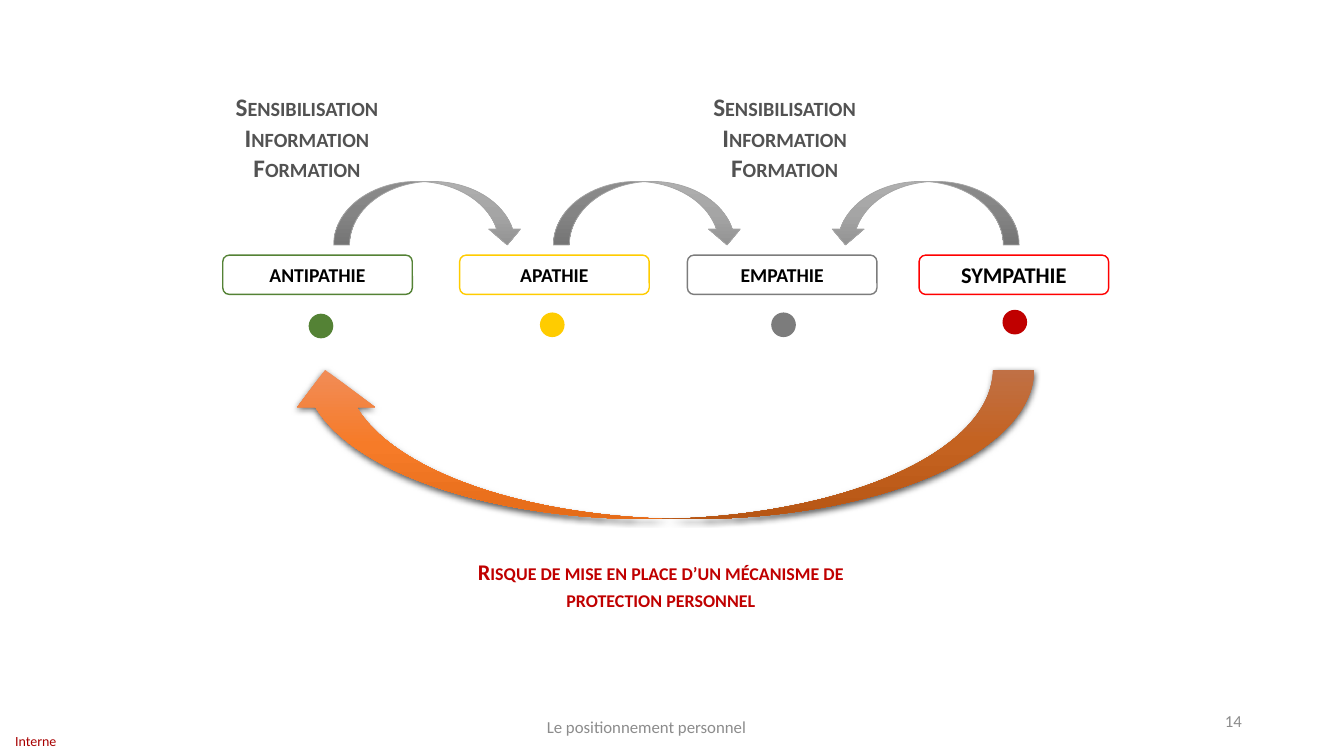
"""Build the slide on personal positioning, from antipathy to sympathy."""
import copy
from dataclasses import dataclass
from typing import Any, Optional

import lxml.etree
import pptx
import pptx.dml.color
import pptx.enum.shapes
import pptx.enum.text
import pptx.oxml.ns
import pptx.presentation
import pptx.shapes.autoshape
import pptx.slide
import pptx.text.text
import pptx.util

Pt = pptx.util.Pt
qn = pptx.oxml.ns.qn
Shape = pptx.enum.shapes.MSO_SHAPE
Align = pptx.enum.text.PP_ALIGN
Anchor = pptx.enum.text.MSO_ANCHOR

COLORS = {
    "green": "548235",
    "yellow": "FFCC00",
    "grey": "7C7C7C",
    "dark_red": "C00000",
    "red": "FF0000",
    "black": "000000",
    "heading": "525252",
    "footer": "8C8C8C",
    "label": "A80000",
    "arrow_line": "A5A5A5",
}
GREY_GRADIENT = ("AFAFAF", "A5A5A5", "939393")
ORANGE_GRADIENT = ("F18C57", "F67B28", "E56C19")

STAGE_WIDTH, STAGE_HEIGHT, STAGE_TOP = 135.4, 28.1, 182.2
DOT_SIZE, DOT_LEFT, DOT_PITCH = 16.6, 221, 165.2
ARROW_TOP, ARROW_HEIGHT = 129.6, 45.4


@dataclass
class Box:
    left: float
    top: float
    width: float
    height: float

    def lengths(self) -> tuple:
        return tuple(Pt(value) for value in (self.left, self.top, self.width, self.height))


@dataclass
class Stage:
    name: str
    left: float
    dot_top: float
    outline: str
    dot: str
    size: float = 14


@dataclass
class Arrow:
    box: Box
    kind: Any
    gradient: tuple
    flipped: bool = False
    line: Optional[str] = None
    adjustments: tuple = ()
    shadow: bool = False


@dataclass
class Caption:
    lines: tuple
    box: Box
    size: float
    color: str
    align: Any = Align.CENTER
    anchor: Any = Anchor.TOP
    bold: bool = False
    small_caps: bool = False
    wrap: bool = True
    margins: Optional[tuple] = None


STAGES = (
    Stage("ANTIPATHIE", 159.1, 224.6, "green", "green"),
    Stage("APATHIE", 328.3, 223.7, "yellow", "yellow"),
    Stage("EMPATHIE", 491, 223.7, "grey", "grey"),
    Stage("SYMPATHIE", 656.5, 221.8, "red", "dark_red", 16),
)
ARROWS = tuple(
    Arrow(Box(left, ARROW_TOP, STAGE_WIDTH, ARROW_HEIGHT), Shape.CURVED_DOWN_ARROW,
          GREY_GRADIENT, flipped, "arrow_line")
    for left, flipped in ((238.3, False), (395.3, False), (592.6, True))
) + (
    Arrow(Box(204.5, 264.2, 534.2, 106.6), Shape.CURVED_UP_ARROW, ORANGE_GRADIENT,
          True, adjustments=(0.277, 0.521, 0.25), shadow=True),
)
CAPTIONS = tuple(
    Caption(("Sensibilisation", "Information", "Formation"), Box(left, 61.9, 117.4, 72.7),
            18, "heading", bold=True, small_caps=True, wrap=False)
    for left in (160.6, 501.8)
) + (
    Caption(("Risque de mise en place d’un mécanisme de protection personnel",),
            Box(299.5, 395.3, 344.9, 46.1), 16, "dark_red", bold=True, small_caps=True),
    Caption(("Le positionnement personnel",), Box(224.6, 508.3, 474.5, 22.3), 12, "footer",
            anchor=Anchor.MIDDLE),
    Caption(("14",), Box(678.2, 500.4, 216, 28.8), 12, "footer", Align.RIGHT, Anchor.MIDDLE),
    Caption(("Interne",), Box(0, 519.1, 51.1, 20.9), 10, "label", Align.LEFT, Anchor.MIDDLE,
            margins=(10.8, 0, 0, 0)),
)


def rgb(value: str) -> pptx.dml.color.RGBColor:
    return pptx.dml.color.RGBColor.from_string(value)


def apply_format(target: Any, values: dict) -> None:
    for name, value in values.items():
        setattr(target, name, value)


def write_line(paragraph: pptx.text.text._Paragraph, text: str, size: float, color: str,
               bold: bool, align: Any = Align.CENTER, small_caps: bool = False) -> None:
    paragraph.alignment = align
    run = paragraph.add_run()
    run.text = text
    apply_format(run.font, {"name": "Calibri", "size": Pt(size), "bold": bold})
    run.font.color.rgb = rgb(COLORS[color])
    if small_caps:
        run._r.get_or_add_rPr().set("cap", "small")


def add_shape(slide: pptx.slide.Slide, kind: Any, box: Box, line: Optional[str],
              line_width: float = 1) -> pptx.shapes.autoshape.Shape:
    shape = slide.shapes.add_shape(kind, *box.lengths())
    shape.shadow.inherit = False
    if line:
        shape.line.color.rgb = rgb(COLORS[line])
        shape.line.width = Pt(line_width)
    else:
        shape.line.fill.background()
    return shape


def add_stage(slide: pptx.slide.Slide, stage: Stage, index: int) -> None:
    dot_box = Box(DOT_LEFT + index * DOT_PITCH, stage.dot_top, DOT_SIZE, DOT_SIZE)
    dot = add_shape(slide, Shape.OVAL, dot_box, stage.dot)
    dot.fill.solid()
    dot.fill.fore_color.rgb = rgb(COLORS[stage.dot])
    frame_box = Box(stage.left, STAGE_TOP, STAGE_WIDTH, STAGE_HEIGHT)
    frame = add_shape(slide, Shape.ROUNDED_RECTANGLE, frame_box, stage.outline)
    frame.fill.background()
    frame.text_frame.vertical_anchor = Anchor.MIDDLE
    write_line(frame.text_frame.paragraphs[0], stage.name, stage.size, "black", True)


def add_arrow(slide: pptx.slide.Slide, arrow: Arrow) -> None:
    shape = add_shape(slide, arrow.kind, arrow.box, arrow.line, 0.5)
    properties = shape._element.spPr
    for index, value in enumerate(arrow.adjustments):
        shape.adjustments[index] = value
    if arrow.flipped:
        properties.find(qn("a:xfrm")).set("flipH", "1")
    shape.fill.gradient()
    shape.fill.gradient_angle = 270
    stop_list = properties.find(".//" + qn("a:gsLst"))
    stop_list.insert(1, copy.deepcopy(stop_list[0]))
    for index, stop in enumerate(shape.fill.gradient_stops):
        stop.position = index / 2
        stop.color.rgb = rgb(arrow.gradient[index])
    if arrow.shadow:
        shadow = lxml.etree.SubElement(
            properties.find(qn("a:effectLst")), qn("a:outerShdw"),
            blurRad=str(Pt(4.5)), dist=str(Pt(1.5)), dir="5400000", rotWithShape="0")
        color = lxml.etree.SubElement(shadow, qn("a:srgbClr"), val=COLORS["black"])
        lxml.etree.SubElement(color, qn("a:alpha"), val="63000")


def add_caption(slide: pptx.slide.Slide, caption: Caption) -> None:
    frame = slide.shapes.add_textbox(*caption.box.lengths()).text_frame
    apply_format(frame, {"word_wrap": caption.wrap, "vertical_anchor": caption.anchor})
    if caption.margins:
        sides = ("margin_left", "margin_top", "margin_right", "margin_bottom")
        apply_format(frame, {side: Pt(value) for side, value in zip(sides, caption.margins)})
    for index, text in enumerate(caption.lines):
        paragraph = frame.add_paragraph() if index else frame.paragraphs[0]
        write_line(paragraph, text, caption.size, caption.color, caption.bold,
                   caption.align, caption.small_caps)


def main() -> None:
    presentation = pptx.Presentation()
    apply_format(presentation, {"slide_width": Pt(960), "slide_height": Pt(540)})
    slide = presentation.slides.add_slide(presentation.slide_layouts[6])
    for index, stage in enumerate(STAGES):
        add_stage(slide, stage, index)
    for arrow in ARROWS:
        add_arrow(slide, arrow)
    for caption in CAPTIONS:
        add_caption(slide, caption)
    presentation.save("out.pptx")


if __name__ == "__main__":
    main()
